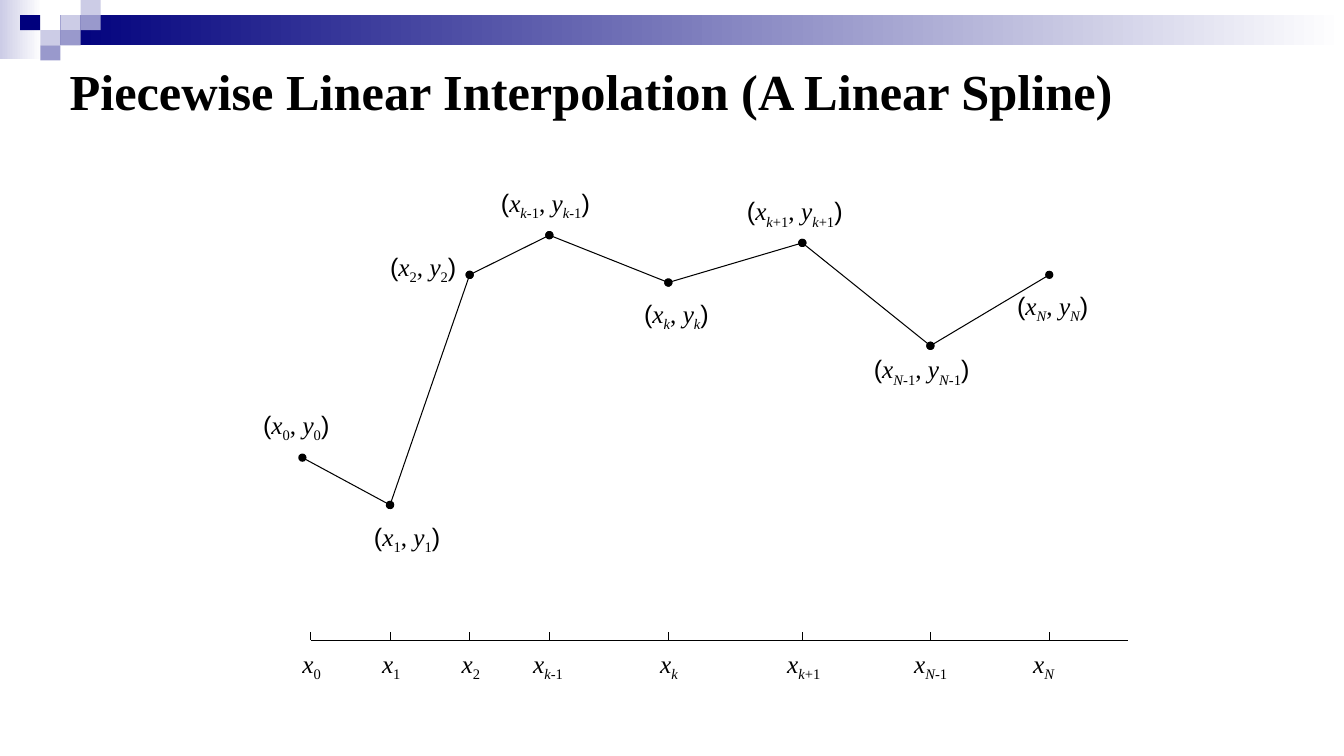
from pptx import Presentation
from pptx.dml.color import RGBColor
from pptx.enum.shapes import MSO_CONNECTOR, MSO_SHAPE
from pptx.enum.text import MSO_ANCHOR, MSO_AUTO_SIZE, PP_ALIGN
from pptx.oxml.ns import qn
from pptx.util import Pt
from lxml import etree

RECT, STRAIGHT = MSO_SHAPE.RECTANGLE, MSO_CONNECTOR.STRAIGHT
TOP, LEFT, FIT = MSO_ANCHOR.TOP, PP_ALIGN.LEFT, MSO_AUTO_SIZE.SHAPE_TO_FIT_TEXT

BLACK = RGBColor(0x00, 0x00, 0x00)
WHITE = RGBColor(0xFF, 0xFF, 0xFF)
NAVY = RGBColor(0x00, 0x00, 0x7D)
LILAC = RGBColor(0xCC, 0xCC, 0xE6)
LAVENDER = RGBColor(0x99, 0x99, 0xCC)

SERIF, SANS = "Times New Roman", "Arial"
TITLE_FONT = {"name": SERIF, "size": Pt(36), "bold": True}
MATH_FONT = {"name": SERIF, "size": Pt(18), "italic": True}
PLAIN_FONT = {"name": SERIF, "size": Pt(18), "italic": False}
PAREN_FONT = {"name": SANS, "size": Pt(18), "italic": False}
LABEL_FRAME = {"margin_left": 0, "margin_top": 0, "margin_right": 0,
               "margin_bottom": 0, "word_wrap": True, "auto_size": FIT}

# Header mosaic: column, row, colour
CELL_W, CELL_H = 14.4, 10.8
MOSAIC = [(3, 1, LILAC), (4, 0, LILAC), (4, 1, LAVENDER), (2, 2, LILAC),
          (1, 1, NAVY), (3, 2, LAVENDER), (2, 3, LAVENDER)]

# Knots: subscript (italic, upright), point, point label, axis label left
KNOTS = [
    (("", "0"), (216, 326.9), (187.9, 292.3), 216),
    (("", "1"), (278.6, 360.7), (267.1, 372.2), 272.9),
    (("", "2"), (335.5, 196.3), (278.6, 179.3), 329.8),
    (("k", "-1"), (392.4, 168), (357.8, 133.9), 380.9),
    (("k", ""), (477.4, 201.8), (460.1, 213.1), 471.6),
    (("k", "+1"), (573.1, 173.5), (533.5, 139.7), 562.3),
    (("N", "-1"), (664.6, 247), (624.2, 252.7), 653),
    (("N", ""), (749.5, 196.3), (726.5, 207.4), 738),
]
AXIS_START, AXIS_END, AXIS_Y, TICK = 222, 805.7, 457.2, 5.7
AXIS_LABEL_TOP = 463.2


def apply(target, values):
    for name, value in values.items():
        setattr(target, name, value)


def add_block(slide, x, y, w, h, color, fade_to=None):
    sp = slide.shapes.add_shape(RECT, Pt(x), Pt(y), Pt(w), Pt(h))
    sp.shadow.inherit = False
    sp.line.fill.background()
    if fade_to is None:
        sp.fill.solid()
        sp.fill.fore_color.rgb = color
        return
    sp.fill.gradient()
    sp.fill.gradient_angle = 0
    for stop, rgb in zip(sp.fill.gradient_stops, (color, fade_to)):
        stop.color.rgb = rgb


def add_line(slide, start, end, dots=False):
    cx = slide.shapes.add_connector(STRAIGHT, *map(Pt, start + end))
    cx.line.color.rgb = BLACK
    cx.line.width = Pt(0.75)
    if dots:
        ln = cx.line._get_or_add_ln()
        for tag in ("a:headEnd", "a:tailEnd"):
            etree.SubElement(ln, qn(tag), type="oval")
    etree.SubElement(cx._element.spPr, qn("a:effectLst"))


def add_run(p, text, font, subscript=False):
    r = p.add_run()
    r.text = text
    apply(r.font, font)
    r.font.color.rgb = BLACK
    if subscript:
        r._r.get_or_add_rPr().set("baseline", "-25000")


def add_variable(p, letter, subscript):
    add_run(p, letter, MATH_FONT)
    for text, font in zip(subscript, (MATH_FONT, PLAIN_FONT)):
        if text:
            add_run(p, text, font, subscript=True)


def add_label(slide, x, y, w):
    tf = slide.shapes.add_textbox(Pt(x), Pt(y), Pt(w), Pt(21.6)).text_frame
    apply(tf, LABEL_FRAME)
    return tf.paragraphs[0]


def add_point_label(slide, x, y, subscript):
    p = add_label(slide, x, y, 73.4)
    add_run(p, "(", PAREN_FONT)
    add_variable(p, "x", subscript)
    add_run(p, ", ", PLAIN_FONT)
    add_variable(p, "y", subscript)
    add_run(p, ")", PAREN_FONT)


def set_title(slide, text):
    sp = slide.shapes.title
    apply(sp, {"left": Pt(42.5), "top": Pt(39.6), "width": Pt(834.5), "height": Pt(51)})
    tf = sp.text_frame
    apply(tf, {"vertical_anchor": TOP, "word_wrap": True, "auto_size": MSO_AUTO_SIZE.NONE})
    p = tf.paragraphs[0]
    p.alignment = LEFT
    add_run(p, text, TITLE_FONT)


def main():
    prs = Presentation()
    prs.slide_width, prs.slide_height = Pt(960), Pt(540)
    slide = prs.slides.add_slide(prs.slide_layouts[5])

    # Header band
    add_block(slide, 0, 0, 30, 42, LILAC, WHITE)
    add_block(slide, 43.2, CELL_H, 916.8, 2 * CELL_H, NAVY, WHITE)
    for col, row, color in MOSAIC:
        add_block(slide, col * CELL_W, row * CELL_H, CELL_W, CELL_H, color)

    set_title(slide, "Piecewise Linear Interpolation (A Linear Spline)")

    # Axis, ticks and labels
    add_line(slide, (AXIS_START, AXIS_Y), (AXIS_END, AXIS_Y))
    for subscript, (x, _), label_at, axis_label_x in KNOTS:
        tick_x = max(x, AXIS_START)
        add_line(slide, (tick_x, AXIS_Y - TICK), (tick_x, AXIS_Y))
        add_variable(add_label(slide, axis_label_x, AXIS_LABEL_TOP, 28), "x", subscript)
        add_point_label(slide, *label_at, subscript)

    # Spline segments
    points = [knot[1] for knot in KNOTS]
    for start, end in zip(points, points[1:]):
        add_line(slide, start, end, dots=True)

    prs.save("out.pptx")


if __name__ == "__main__":
    main()
